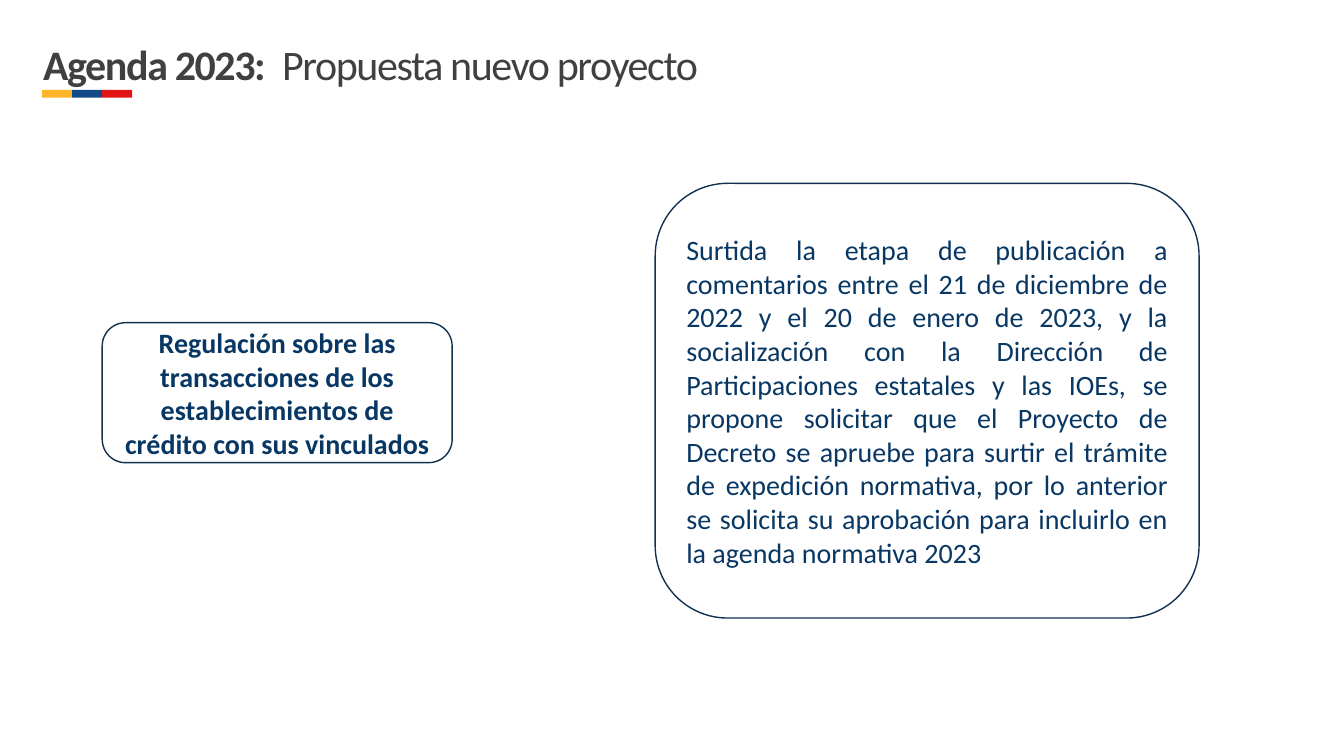
import pptx
import pptx.util
import pptx.dml.color
import pptx.enum.shapes
import pptx.enum.text

Pt = pptx.util.Pt
RGB = pptx.dml.color.RGBColor
KIND = pptx.enum.shapes.MSO_SHAPE
ALIGN = pptx.enum.text.PP_ALIGN
ANCHOR = pptx.enum.text.MSO_ANCHOR
FIT = pptx.enum.text.MSO_AUTO_SIZE

GOLD = RGB(0xFF, 0xB5, 0x27)
BLUE = RGB(0x15, 0x4A, 0x8A)
RED = RGB(0xE3, 0x14, 0x14)
NAVY = RGB(0x11, 0x30, 0x52)
INK = RGB(0x08, 0x37, 0x63)
GREY = RGB(0x40, 0x40, 0x40)
WHITE = RGB(0xFF, 0xFF, 0xFF)

TOPIC = ("Regulación sobre las transacciones de los establecimientos de "
         "crédito con sus vinculados")
STATUS = ("Surtida la etapa de publicación a comentarios entre el 21 de "
          "diciembre de 2022 y el 20 de enero de 2023, y la socialización "
          "con la Dirección de Participaciones estatales y las IOEs, se "
          "propone solicitar que el Proyecto de Decreto se apruebe para "
          "surtir el trámite de expedición normativa, por lo anterior se "
          "solicita su aprobación para incluirlo en la agenda normativa 2023")


def write(para, text, size=20, color=INK, bold=False, font="Calibri", track=0):
    """Add a run; track is the letter spacing in points."""
    run = para.add_run()
    run.text = text
    run.font.name = font
    run.font.size = Pt(size)
    run.font.bold = bold
    run.font.color.rgb = color
    if track:
        run.font._element.set("spc", str(round(track * 100))) if hasattr(
            run.font, "_element") else run._r.get_or_add_rPr().set(
            "spc", str(round(track * 100)))


class Deck:
    def __init__(self, wide, high):
        self.file = pptx.Presentation()
        self.file.slide_width = Pt(wide)
        self.file.slide_height = Pt(high)
        self.slide = self.file.slides.add_slide(self.file.slide_layouts[5])

    def title(self, lead, rest, left, top, wide, high):
        shape = self.slide.shapes.title
        shape.left, shape.top = Pt(left), Pt(top)
        shape.width, shape.height = Pt(wide), Pt(high)
        frame = shape.text_frame
        frame.margin_left = frame.margin_top = Pt(0.8)
        frame.margin_right = frame.margin_bottom = 0
        frame.word_wrap = True
        frame.auto_size = FIT.SHAPE_TO_FIT_TEXT
        frame.vertical_anchor = ANCHOR.TOP
        para = frame.paragraphs[0]
        para.alignment = ALIGN.LEFT
        para.line_spacing = Pt(40)
        para.space_before = Pt(0.8)
        write(para, lead, size=30, color=GREY, bold=True, track=-1)
        write(para, rest, size=30, color=GREY, track=-1)

    def shape(self, kind, left, top, wide, high, fill, line=None):
        shape = self.slide.shapes.add_shape(
            kind, Pt(left), Pt(top), Pt(wide), Pt(high))
        shape.shadow.inherit = False
        shape.fill.solid()
        shape.fill.fore_color.rgb = fill
        if line is None:
            shape.line.fill.background()
        else:
            shape.line.color.rgb = line
            shape.line.width = Pt(1)
        return shape

    def stripe(self, colors, left, top, wide, high):
        for i, color in enumerate(colors):
            self.shape(KIND.RECTANGLE, left + i * wide, top, wide, high, color)

    def card(self, text, left, top, wide, high, align, bold=False):
        shape = self.shape(KIND.ROUNDED_RECTANGLE, left, top, wide, high,
                           WHITE, NAVY)
        frame = shape.text_frame
        frame.word_wrap = True
        frame.vertical_anchor = ANCHOR.MIDDLE
        para = frame.paragraphs[0]
        para.alignment = align
        write(para, text, bold=bold)


def main():
    deck = Deck(960, 540)
    deck.title("Agenda 2023: ", " Propuesta nuevo proyecto", 30, 23, 770, 41)
    deck.stripe((GOLD, BLUE, RED), 30, 64.2, 21.5, 5.6)
    deck.card(TOPIC, 73, 230.5, 250, 100, ALIGN.CENTER, bold=True)
    deck.card(STATUS, 468, 131, 388.5, 310.5, ALIGN.JUSTIFY)
    deck.file.save("out.pptx")


if __name__ == "__main__":
    main()
